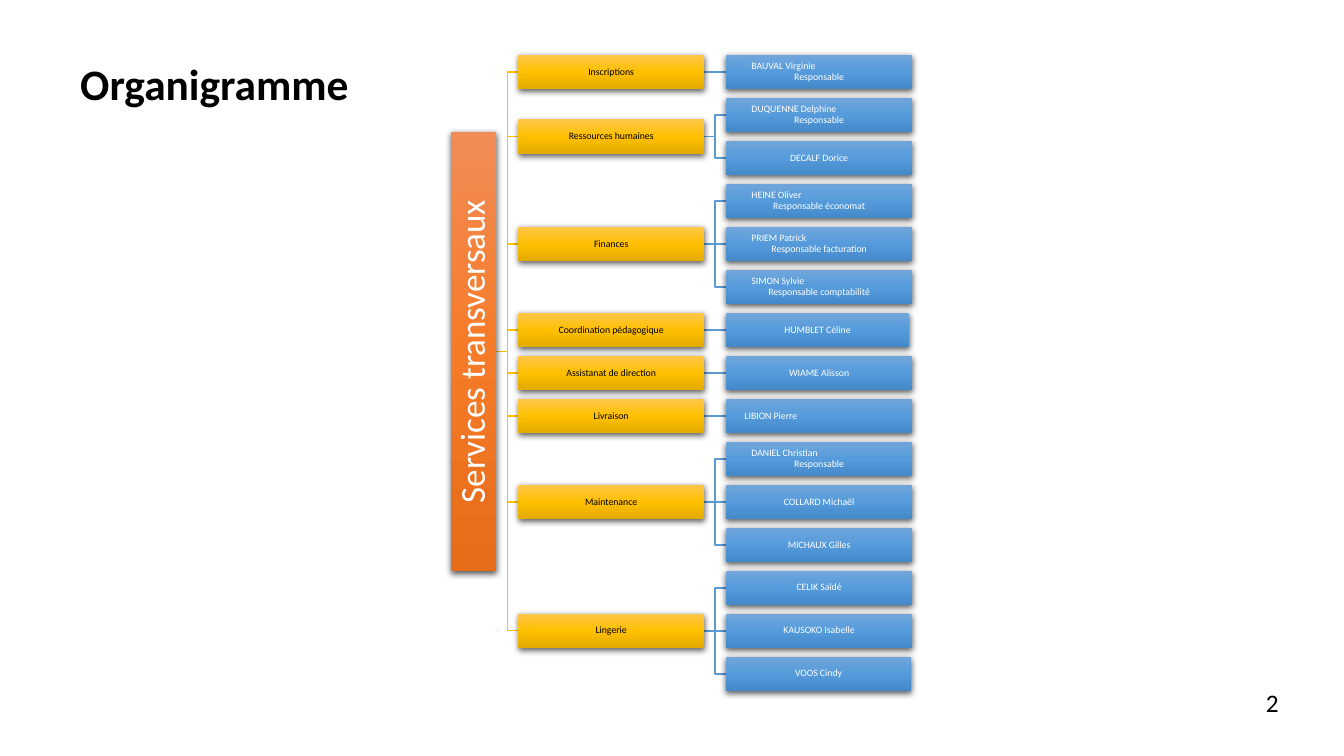
from dataclasses import dataclass

from lxml.etree import SubElement
from pptx import Presentation
from pptx.dml.color import RGBColor
from pptx.enum.shapes import MSO_CONNECTOR, MSO_SHAPE
from pptx.enum.text import MSO_ANCHOR, MSO_AUTO_SIZE, PP_ALIGN
from pptx.oxml.ns import qn
from pptx.util import Pt


@dataclass(frozen=True)
class Style:
    stops: tuple[str, str, str]
    ink: str
    size: float


@dataclass(frozen=True)
class Theme:
    font: str = "Calibri"
    ink: str = "000000"
    title_size: float = 31
    number_size: float = 18
    division: Style = Style(("F18C57", "F67B28", "E56C19"), "FFFFFF", 25)
    service: Style = Style(("FFC64B", "FFC000", "E3AB00"), "000000", 7)
    member: Style = Style(("71A6DB", "559BDB", "448ACA"), "FFFFFF", 7)
    service_link: str = "FFC000"
    member_link: str = "5B9BD5"
    shadow: str = "000000"


@dataclass(frozen=True)
class Member:
    name: str
    role: str = ""
    indent: float = 0  # zero centres the name
    width: float = 132.6


@dataclass(frozen=True)
class Service:
    name: str
    members: tuple[Member, ...]


THEME = Theme()
BOX_W, BOX_H, ROW_PITCH = 132.6, 24.56, 30.7
FIRST_ROW_Y = 51.5
DIVISION_X, DIVISION_W, DIVISION_H = 322, 32.4, 313.9
COLUMN_GAP = 15.9
SERVICE_X = DIVISION_X + DIVISION_W + COLUMN_GAP
MEMBER_X = SERVICE_X + BOX_W + COLUMN_GAP
NAME_INDENT = 18

SERVICES = (
    Service("Inscriptions", (Member("BAUVAL Virginie", "Responsable", NAME_INDENT),)),
    Service("Ressources humaines", (
        Member("DUQUENNE Delphine", "Responsable", NAME_INDENT),
        Member("DECALF Dorice"),
    )),
    Service("Finances", (
        Member("HEINE Oliver", "Responsable économat", NAME_INDENT),
        Member("PRIEM Patrick", "Responsable facturation", NAME_INDENT),
        Member("SIMON Sylvie", "Responsable comptabilité", NAME_INDENT),
    )),
    Service("Coordination pédagogique", (Member("HUMBLET Céline", width=130.3),)),
    Service("Assistanat de direction", (Member("WIAME Alisson"),)),
    Service("Livraison", (Member("LIBION Pierre", indent=13),)),
    Service("Maintenance", (
        Member("DANIEL Christian", "Responsable", NAME_INDENT),
        Member("COLLARD Michaël"),
        Member("MICHAUX Gilles"),
    )),
    Service("Lingerie", (
        Member("CELIK Saïdé"),
        Member("KAUSOKO Isabelle"),
        Member("VOOS Cindy", width=131.8),
    )),
)


def set_font(paragraph, size: float, color: str, bold: bool = False) -> None:
    font = paragraph.font
    font.name, font.size, font.bold = THEME.font, Pt(size), bold
    font.color.rgb = RGBColor.from_string(color)


def apply_relief(shape, stops: tuple[str, str, str]) -> None:
    """Give the shape a vertical three-stop gradient and a soft shadow below."""
    shape.fill.gradient()
    shape.fill.gradient_angle = 270
    shape.line.fill.background()
    shape.shadow.inherit = False
    properties = shape._element.spPr
    stop_list = properties.find(qn("a:gradFill")).find(qn("a:gsLst"))
    stop_list.clear()
    for position, color in zip((0, 50000, 100000), stops):
        stop = SubElement(stop_list, qn("a:gs"), pos=str(position))
        SubElement(stop, qn("a:srgbClr"), val=color)
    shadow = SubElement(properties.find(qn("a:effectLst")), qn("a:outerShdw"),
                        blurRad=str(Pt(4.5)), dist=str(Pt(1.5)), dir="5400000",
                        algn="ctr", rotWithShape="0")
    shadow_color = SubElement(shadow, qn("a:srgbClr"), val=THEME.shadow)
    SubElement(shadow_color, qn("a:alpha"), val="63000")


def add_box(slide, left: float, middle: float, width: float, height: float,
            lines: tuple[str, ...], style: Style, indent: float = 0):
    """Draw a box centred on middle; an indent left-aligns its first line."""
    box = slide.shapes.add_shape(MSO_SHAPE.RECTANGLE, Pt(left), Pt(middle - height / 2),
                                 Pt(width), Pt(height))
    apply_relief(box, style.stops)
    frame = box.text_frame
    frame.word_wrap = True
    frame.vertical_anchor = MSO_ANCHOR.MIDDLE
    frame.margin_left = frame.margin_right = frame.margin_top = frame.margin_bottom = 0
    frame.text = "\n".join(lines)
    for paragraph in frame.paragraphs:
        paragraph.alignment = PP_ALIGN.CENTER
        paragraph.line_spacing = 0.9
        set_font(paragraph, style.size, style.ink)
    if indent:
        name = frame.paragraphs[0]
        name.alignment = PP_ALIGN.LEFT
        name._p.get_or_add_pPr().set("marL", str(Pt(indent)))
    return box


def add_link(slide, left: float, start_y: float, end_y: float, color: str) -> None:
    """Cross a column gap, with a bend halfway when the heights differ."""
    right, bend = left + COLUMN_GAP, left + COLUMN_GAP / 2
    if abs(start_y - end_y) < 0.5:
        link = slide.shapes.add_connector(MSO_CONNECTOR.STRAIGHT, Pt(left), Pt(start_y),
                                          Pt(right), Pt(start_y))
        SubElement(link._element.spPr, qn("a:effectLst"))
    else:
        outline = slide.shapes.build_freeform(Pt(left), Pt(start_y))
        corners = ((bend, start_y), (bend, end_y), (right, end_y))
        outline.add_line_segments([(Pt(x), Pt(y)) for x, y in corners], close=False)
        link = outline.convert_to_shape()
        link.fill.background()
        link.shadow.inherit = False
    link.line.color.rgb = RGBColor.from_string(color)
    link.line.width = Pt(1)


def add_chart_of_services(slide) -> None:
    member_rows: list[list[float]] = []
    row = 0
    for service in SERVICES:
        member_rows.append([FIRST_ROW_Y + ROW_PITCH * (row + i)
                            for i in range(len(service.members))])
        row += len(service.members)
    service_rows = [(rows[0] + rows[-1]) / 2 for rows in member_rows]
    division_y = (service_rows[0] + service_rows[-1]) / 2

    for service_y, rows in zip(service_rows, member_rows):
        for member_y in rows:
            add_link(slide, SERVICE_X + BOX_W, service_y, member_y, THEME.member_link)
        add_link(slide, DIVISION_X + DIVISION_W, division_y, service_y, THEME.service_link)

    division = add_box(slide, DIVISION_X, division_y, DIVISION_W, DIVISION_H,
                       ("Services transversaux",), THEME.division)
    division.text_frame._txBody.bodyPr.set("vert", "vert270")
    for service, service_y, rows in zip(SERVICES, service_rows, member_rows):
        add_box(slide, SERVICE_X, service_y, BOX_W, BOX_H, (service.name,), THEME.service)
        for member, member_y in zip(service.members, rows):
            lines = (member.name, member.role) if member.role else (member.name,)
            add_box(slide, MEMBER_X, member_y, member.width, BOX_H, lines,
                    THEME.member, member.indent)


def format_title(title) -> None:
    title.left, title.top, title.width, title.height = Pt(40.3), Pt(30.2), Pt(222.5), Pt(55.4)
    frame = title.text_frame
    frame.text = "Organigramme"
    frame.auto_size = MSO_AUTO_SIZE.NONE
    frame.vertical_anchor = MSO_ANCHOR.MIDDLE
    frame.margin_left, frame.margin_top = Pt(17), Pt(10.8)
    heading = frame.paragraphs[0]
    heading.alignment = PP_ALIGN.LEFT
    heading.line_spacing = 0.9
    set_font(heading, THEME.title_size, THEME.ink, bold=True)


def add_page_number(slide) -> None:
    number = slide.shapes.add_textbox(Pt(897.1), Pt(487.4), Pt(35.3), Pt(28.8))
    number.text_frame.word_wrap = True
    number.text_frame.text = "2"
    set_font(number.text_frame.paragraphs[0], THEME.number_size, THEME.ink)


def main() -> None:
    deck = Presentation()
    deck.slide_width, deck.slide_height = Pt(960), Pt(540)
    slide = deck.slides.add_slide(deck.slide_layouts[5])
    add_chart_of_services(slide)
    add_page_number(slide)
    format_title(slide.shapes.title)
    deck.save("out.pptx")


if __name__ == "__main__":
    main()
